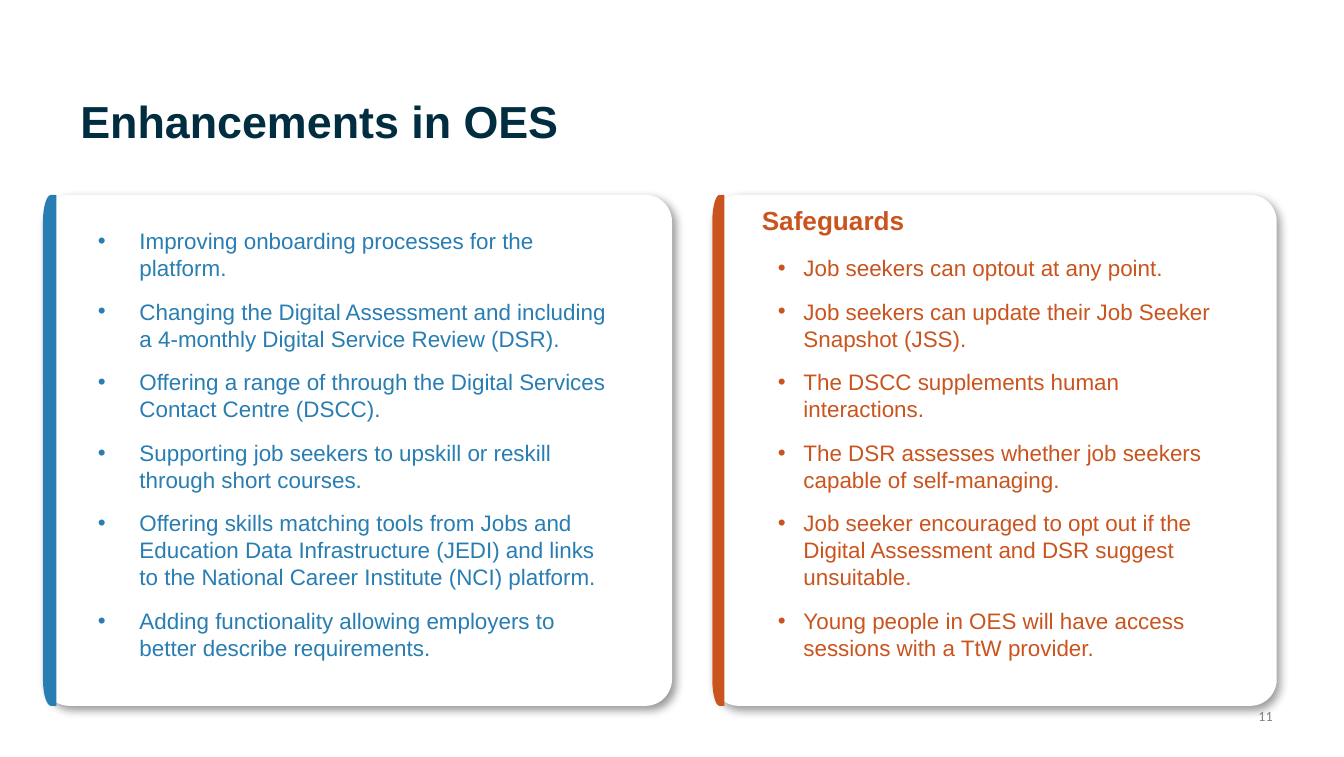
import math
from lxml import etree
from pptx import Presentation
from pptx import util as u
from pptx.dml.color import RGBColor
from pptx.enum import shapes, text
from pptx.oxml import ns

NAVY = RGBColor(0x00, 0x2D, 0x3F)
BLUE = RGBColor(0x28, 0x7D, 0xB2)
RUST = RGBColor(0xC9, 0x54, 0x1E)
GREY = RGBColor(0x80, 0x80, 0x80)
WHITE = RGBColor(0xFF, 0xFF, 0xFF)

COLS, ROWS = 100, 56.3  # square grid cells of a tenth of an inch
TOP, TALL = 14.5, 38    # rows shared by both cards

GAINS = [
    "Improving onboarding processes for the platform.",
    "Changing the Digital Assessment and including a 4-monthly Digital Service Review (DSR).",
    "Offering a range of through the Digital Services Contact Centre (DSCC).",
    "Supporting job seekers to upskill or reskill through short courses.",
    "Offering skills matching tools from Jobs and Education Data Infrastructure (JEDI) "
    "and links to the National Career Institute (NCI) platform.",
    "Adding functionality allowing employers to better describe requirements.",
]
GUARDS = [
    "Job seekers can optout at any point.",
    "Job seekers can update their Job Seeker Snapshot (JSS).",
    "The DSCC supplements human interactions.",
    "The DSR assesses whether job seekers capable of self-managing.",
    "Job seeker encouraged to opt out if the Digital Assessment and DSR suggest unsuitable.",
    "Young people in OES will have access sessions with a TtW provider.",
]


def cell(n):
    return u.Inches(n / 10)


def node(up, tag, **attrs):
    return etree.SubElement(up, ns.qn("a:" + tag), attrs)


class Deck:
    """Holds the type style and the current slide."""

    def __init__(self, font="Arial", size=12, gap=4.5):
        self.font, self.size, self.gap = font, size, gap
        self.prs = Presentation()
        self.prs.slide_width, self.prs.slide_height = cell(COLS), cell(ROWS)
        self.slide = self.prs.slides.add_slide(self.prs.slide_layouts[6])

    def paint(self, shape, color):
        shape.fill.solid()
        shape.fill.fore_color.rgb = color
        shape.line.fill.background()
        shape.shadow.inherit = False

    def card(self, left, wide, color, edge):
        """White rounded panel with a coloured strip, edge columns wide."""
        group = self.slide.shapes.add_group_shape().shapes
        panel = group.add_shape(shapes.MSO_SHAPE.ROUNDED_RECTANGLE,
                                cell(left), cell(TOP), cell(wide), cell(TALL))
        panel.adjustments[0] = 0.052
        self.paint(panel, WHITE)
        glow = node(panel._element.spPr.find(ns.qn("a:effectLst")), "outerShdw",
                    blurRad=str(u.Pt(5)), dist=str(u.Pt(3)),
                    dir=str(45 * 60000), algn="tl", rotWithShape="0")
        node(node(glow, "srgbClr", val="000000"), "alpha", val="40000")
        self.strip(group, left, edge, color)

    def strip(self, group, left, wide, color):
        """Bar whose two left corners are quarter ellipses."""
        rx, ry, steps = wide * 0.6, 2, 12
        turns = [math.pi / 2 * i / steps for i in range(steps + 1)]
        arc = [(left + rx * (1 - math.sin(t)), ry * (1 - math.cos(t))) for t in turns]
        upper = [(x, TOP + y) for x, y in reversed(arc)]
        lower = [(x, TOP + TALL - y) for x, y in arc]
        # The arc runs from the top edge (t = 0) to the left edge.
        upper = [(left + rx * (1 - math.sin(t)), TOP + ry * (1 - math.cos(t)))
                 for t in reversed(turns)]
        arc = [(left + rx * (1 - math.cos(t)), ry * (1 - math.sin(t))) for t in turns]
        upper = [(x, TOP + y) for x, y in reversed(arc)]
        lower = [(x, TOP + TALL - y) for x, y in arc]
        pts = [(cell(x), cell(y)) for x, y in
               upper + lower + [(left + wide, TOP + TALL)]]
        pen = group.build_freeform(cell(left + wide), cell(TOP))
        pen.add_line_segments(pts, close=True)
        self.paint(pen.convert_to_shape(), color)

    def box(self, left, top, wide, tall, anchor=text.MSO_ANCHOR.TOP):
        frame = self.slide.shapes.add_textbox(
            cell(left), cell(top), cell(wide), cell(tall)).text_frame
        frame.word_wrap = True
        frame.vertical_anchor = anchor
        return frame

    def put(self, para, words, color, size=None, bold=False, font=None):
        run = para.add_run()
        run.text = words
        run.font.name = font or self.font
        run.font.size = u.Pt(size or self.size)
        run.font.bold = bold
        run.font.color.rgb = color

    def bullets(self, frame, items, color, dent):
        for i, item in enumerate(items):
            para = frame.add_paragraph() if i else frame.paragraphs[0]
            para.space_before = u.Pt(self.gap if i else 0)
            para.space_after = u.Pt(self.gap)
            props = para._p.get_or_add_pPr()
            props.set("marL", str(cell(dent)))
            props.set("indent", str(-cell(dent)))
            node(props, "buFont", typeface=self.font)
            node(props, "buChar", char="•")
            self.put(para, item, color)


def main():
    deck = Deck()

    title = deck.box(5, 3.8, 69.6, 10.9, text.MSO_ANCHOR.MIDDLE).paragraphs[0]
    title.line_spacing = 0.9
    deck.put(title, "Enhancements in OES", NAVY, 24, True)

    deck.card(3.2, 46.8, BLUE, 1)
    deck.bullets(deck.box(6.3, 16.4, 40.7, 34.3), GAINS, BLUE, 3.1)

    deck.card(53, 42, RUST, 0.9)
    deck.bullets(deck.box(56.9, 18.4, 34.4, 32.3), GUARDS, RUST, 1.9)
    head = deck.box(55.7, 14.7, 34.4, 3.4).paragraphs[0]
    deck.put(head, "Safeguards", RUST, 14, True)

    foot = deck.box(91.6, 52.6, 3.1, 1.3, text.MSO_ANCHOR.BOTTOM)
    foot.margin_left = foot.margin_right = foot.margin_top = foot.margin_bottom = 0
    foot.paragraphs[0].alignment = text.PP_ALIGN.RIGHT
    deck.put(foot.paragraphs[0], "11", GREY, 7.5, font="Calibri")

    deck.prs.save("out.pptx")


if __name__ == "__main__":
    main()
